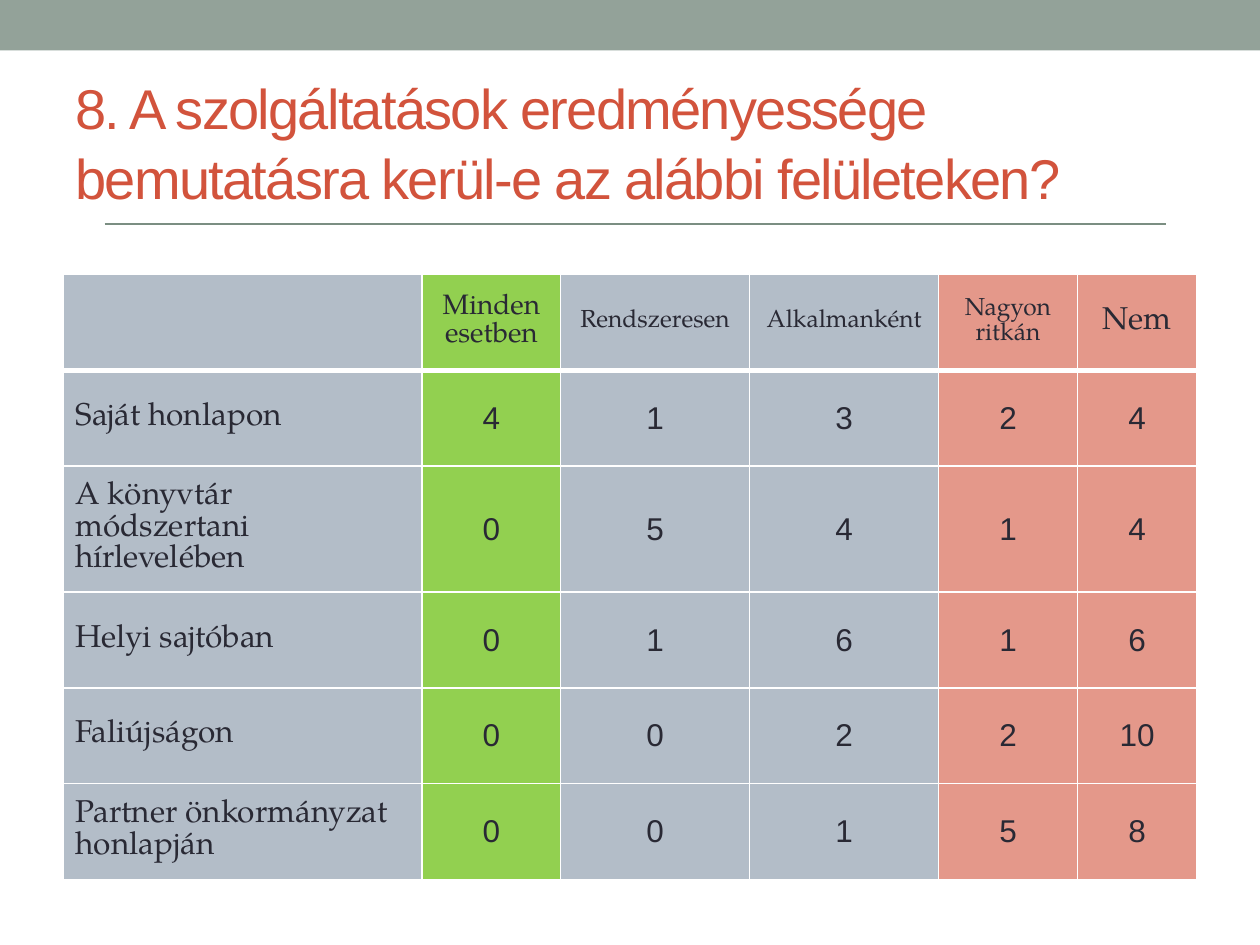
import pptx
import pptx.util
import pptx.dml.color
import pptx.enum.shapes
import pptx.enum.text
import pptx.oxml
from dataclasses import dataclass
from lxml import etree

Inches = pptx.util.Inches
Pt = pptx.util.Pt
Align = pptx.enum.text.PP_ALIGN
Anchor = pptx.enum.text.MSO_ANCHOR


@dataclass(frozen=True)
class Theme:
    sans: str = "Arial"
    serif: str = "TeX Gyre Pagella"
    band: str = "93A299"
    title: str = "D2533C"
    rule: str = "7B8E82"
    ink: str = "292934"
    edge: str = "FFFFFF"
    grey: str = "B3BDC8"
    green: str = "92D050"
    red: str = "E4988A"
    big: int = 32
    body: int = 18
    mid: int = 16
    small: int = 14


THEME = Theme()

# Column heading, width, heading size, fill
COLS = [
    ("", 2.85, THEME.body, THEME.grey),
    ("Minden\nesetben", 1.1, THEME.mid, THEME.green),
    ("Rendszeresen", 1.5, THEME.small, THEME.grey),
    ("Alkalmanként", 1.5, THEME.small, THEME.grey),
    ("Nagyon ritkán", 1.1, THEME.small, THEME.red),
    ("Nem", 0.95, THEME.body, THEME.red),
]
ROWS = [
    ("Saját honlapon", 4, 1, 3, 2, 4),
    ("A könyvtár módszertani hírlevelében", 0, 5, 4, 1, 4),
    ("Helyi sajtóban", 0, 1, 6, 1, 6),
    ("Faliújságon", 0, 0, 2, 2, 10),
    ("Partner önkormányzat honlapján", 0, 0, 1, 5, 8),
]
ROW_H = 0.76


def color(code):
    return pptx.dml.color.RGBColor.from_string(code)


class Page:
    def __init__(self, slide, theme):
        self.slide = slide
        self.theme = theme

    def font(self, para, name, size, code):
        para.font.name = name
        para.font.size = Pt(size)
        para.font.color.rgb = color(code)

    def band(self, x, y, w, h):
        shape = self.slide.shapes.add_shape(
            pptx.enum.shapes.MSO_SHAPE.RECTANGLE,
            Inches(x), Inches(y), Inches(w), Inches(h))
        shape.shadow.inherit = False
        shape.fill.solid()
        shape.fill.fore_color.rgb = color(self.theme.band)
        shape.line.fill.background()

    def title(self, text, x, y, w, h):
        box = self.slide.shapes.add_textbox(
            Inches(x), Inches(y), Inches(w), Inches(h))
        frame = box.text_frame
        frame.word_wrap = True
        frame.vertical_anchor = Anchor.MIDDLE
        para = frame.paragraphs[0]
        run = para.add_run()
        run.text = text
        para.line_spacing = 1.04
        self.font(para, self.theme.sans, self.theme.big, self.theme.title)
        run.font._element.set("spc", "-100")

    def rule(self, x, y, end):
        line = self.slide.shapes.add_connector(
            pptx.enum.shapes.MSO_CONNECTOR.STRAIGHT,
            Inches(x), Inches(y), Inches(end), Inches(y))
        line.line.color.rgb = color(self.theme.rule)
        line.line.width = Pt(1)
        etree.SubElement(line._element.spPr, pptx.oxml.ns.qn("a:effectLst"))

    def edges(self, cell, base):
        """Draw the four cell borders; base is the bottom width in points."""
        props = cell._tc.get_or_add_tcPr()
        for spot, (side, width) in enumerate(
                [("L", 1), ("R", 1), ("T", 1), ("B", base)]):
            props.insert(spot, pptx.oxml.parse_xml(
                f'<a:ln{side} {pptx.oxml.ns.nsdecls("a")} w="{Pt(width)}">'
                f'<a:solidFill><a:srgbClr val="{self.theme.edge}"/>'
                f'</a:solidFill></a:ln{side}>'))

    def cell(self, cell, text, name, size, align, fill, base):
        cell.text = text
        cell.vertical_anchor = Anchor.MIDDLE
        cell.fill.solid()
        cell.fill.fore_color.rgb = color(fill)
        for para in cell.text_frame.paragraphs:
            para.alignment = align
            self.font(para, name, size, self.theme.ink)
        self.edges(cell, base)

    def table(self, cols, rows, x, y, high):
        look = self.theme
        wide = sum(col[1] for col in cols)
        count = len(rows) + 1
        grid = self.slide.shapes.add_table(
            count, len(cols), Inches(x), Inches(y),
            Inches(wide), Inches(high * count)).table
        for c, (head, width, size, fill) in enumerate(cols):
            grid.columns[c].width = Inches(width)
            self.cell(grid.cell(0, c), head, look.serif, size,
                      Align.CENTER, fill, 3)
            name, align = ((look.sans, Align.CENTER) if c
                           else (look.serif, Align.LEFT))
            for r, row in enumerate(rows, 1):
                self.cell(grid.cell(r, c), str(row[c]), name, look.body,
                          align, fill, 1)
                if r > 1:
                    continue
                top = grid.cell(r, c)._tc.tcPr.find(pptx.oxml.ns.qn("a:lnT"))
                top.set("w", str(Pt(3)))


def main():
    deck = pptx.Presentation()
    deck.slide_width = Inches(10)
    deck.slide_height = Inches(7.5)
    page = Page(deck.slides.add_slide(deck.slide_layouts[6]), THEME)
    page.band(0, 0, 10, 0.4)
    page.title("8. A szolgáltatások eredményessége bemutatásra kerül-e "
               "az alábbi felületeken?", 0.5, 0.58, 9, 1.08)
    page.table(COLS, ROWS, 0.5, 2.18, ROW_H)
    page.rule(0.83, 1.78, 9.25)
    deck.save("out.pptx")


if __name__ == "__main__":
    main()
